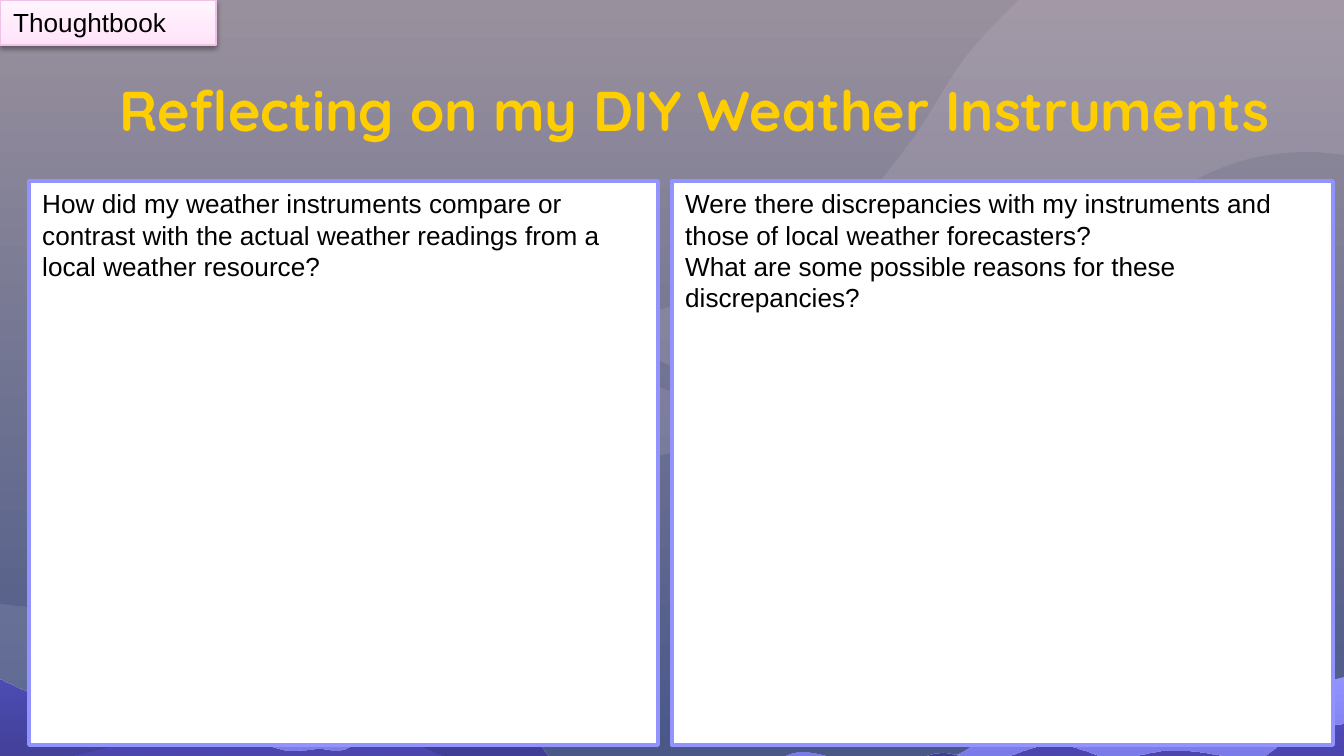
from dataclasses import dataclass
from lxml.etree import Element, SubElement
from math import dist
from pptx import Presentation
from pptx.dml.color import RGBColor as RGB
from pptx.enum.shapes import MSO_SHAPE as Shape
from pptx.enum.text import MSO_ANCHOR as Anchor, PP_ALIGN as Align
from pptx.oxml.ns import qn
from pptx.util import Pt


@dataclass(frozen=True)
class Theme:
    sky: tuple = ((0, "99909D", 100), (100, "495887", 100))
    back: tuple = ((0, "9393FF", 100), (100, "4846BB", 100))
    front: tuple = ((0, "4846BB", 84), (100, "281B66", 63))
    tag: tuple = ((0, "FFE1F9", 100), (35, "FFE9FB", 100), (100, "FFF6FD", 100))
    cloud: str = "FDF0F7"
    gold: str = "FFCE00"
    ink: str = "000000"
    paper: str = "FFFFFF"
    edge: str = "9393FF"
    rim: str = "F1C2E8"
    head: int = 30
    body: int = 14
    display: str = "Quicksand"
    plain: str = "Arial"


T = Theme()
WIDE, HIGH = 1344, 756
PX = 9144000 / WIDE
TURN = 759  # height about which the clouds swap ends

TITLE = "Reflecting on my DIY Weather Instruments"
TAG = "Thoughtbook"
PANELS = [
    (29, 629, ["How did my weather instruments compare or contrast with the "
               "actual weather readings from a local weather resource?"]),
    (672, 661, ["Were there discrepancies with my instruments and those of "
                "local weather forecasters?",
                "What are some possible reasons for these discrepancies?"]),
]

# Each outline is a list of smooth runs; corners fall where runs meet.
CLOUD = [
    [(1344, 0)],
    [(1344, 155), (1310, 152), (1258, 157), (1134, 216), (1023, 306),
     (886, 379), (790, 392), (735, 387), (594, 324)],
    [(616, 319), (660, 333), (731, 288)],
    [(731, 288), (840, 224), (909, 144), (973, 48), (1019, 0)],
]
LENS = [
    [(731, 288), (660, 333), (616, 319)],
    [(616, 319), (674, 306), (731, 288)],
]
BACK = [
    [(1345, 677), (1243, 702), (1163, 726), (1128, 730), (1103, 727),
     (1052, 731), (1015, 728), (993, 734), (957, 755), (919, 763),
     (884, 758), (857, 761), (792, 754), (765, 767), (700, 785),
     (629, 809), (579, 800), (476, 770), (345, 707), (309, 685),
     (289, 694), (265, 704), (235, 708), (204, 720), (172, 727),
     (105, 749), (44, 761), (0, 762)],
    [(0, 911)], [(1345, 911)],
]
FRONT = [
    [(0, 878)], [(1345, 878)],
    [(1345, 724), (1312, 728), (1257, 763)],
    [(1255, 765), (1180, 751), (1140, 755), (1116, 765)],
    [(1114, 764), (1060, 746), (1036, 747), (1007, 757), (988, 763),
     (961, 757), (941, 753), (909, 763), (883, 777), (855, 775),
     (823, 769), (796, 763), (777, 767), (680, 780), (633, 784),
     (555, 763), (516, 716), (482, 695), (456, 692), (445, 696),
     (376, 728), (359, 741), (343, 750), (316, 749), (286, 751),
     (261, 743), (234, 726), (220, 723), (188, 730), (142, 714),
     (121, 711), (85, 710), (0, 680)],
]


def emu(*nums):
    return [round(n * PX) for n in nums]


def handles(run):
    """Two control points for each gap in the run, by chord-length tangents."""
    gaps = [dist(a, b) for a, b in zip(run, run[1:])]
    dirs = [[(q - p) / g for p, q in zip(a, b)]
            for a, b, g in zip(run, run[1:], gaps)]
    tans = [[(u * h + v * g) / (g + h) for u, v in zip(a, b)]
            for a, b, g, h in zip(dirs, dirs[1:], gaps, gaps[1:])]
    ends = [[(3 * u - v) / 2 for u, v in zip(d, t)]
            for d, t in ((dirs[0], tans[0]), (dirs[-1], tans[-1]))]
    tans = [ends[0], *tans, ends[1]]
    return [([p + u * g / 3 for p, u in zip(a, s)],
             [q - v * g / 3 for q, v in zip(b, t)])
            for a, b, g, s, t in zip(run, run[1:], gaps, tans, tans[1:])]


def outline(slide, runs):
    pts, bends = [], []
    for run in runs:
        if not pts or run[0] != pts[-1]:
            pts.append(run[0])
            bends.append(None)
        if len(run) > 1:
            pts += run[1:]
            bends += handles(run)
    pen = slide.shapes.build_freeform(*emu(*pts[0]))
    pen.add_line_segments([emu(*pt) for pt in pts[1:]])
    shape = pen.convert_to_shape()
    for node, bend in zip(list(shape.element.iter(qn("a:lnTo"))), bends[1:]):
        if bend:
            node.tag = qn("a:cubicBezTo")
            for i, pt in enumerate(bend):
                x, y = emu(*pt)
                node.insert(i, Element(qn("a:pt"), x=str(x - shape.left),
                                       y=str(y - shape.top)))
    shape.shadow.inherit = False
    shape.line.fill.background()
    return shape


def shade(fill, root, stops, angle):
    """Gradient of (place, colour, opacity) stops; angle is clockwise."""
    fill.gradient()
    fill.gradient_angle = 360 - angle
    box = next(root.iter(qn("a:gsLst")))
    for old in list(box):
        box.remove(old)
    for place, color, alpha in stops:
        stop = SubElement(box, qn("a:gs"), pos=str(place * 1000))
        tint = SubElement(stop, qn("a:srgbClr"), val=color)
        if alpha < 100:
            SubElement(tint, qn("a:alpha"), val=str(alpha * 1000))


def solid(shape, color, alpha=100):
    shape.fill.solid()
    shape.fill.fore_color.rgb = RGB.from_string(color)
    if alpha < 100:
        tint = next(shape.element.spPr.iter(qn("a:srgbClr")))
        SubElement(tint, qn("a:alpha"), val=str(alpha * 1000))


def card(slide, box, edge, width):
    shape = slide.shapes.add_shape(Shape.RECTANGLE, *emu(*box))
    shape.shadow.inherit = False
    shape.line.color.rgb = RGB.from_string(edge)
    shape.line.width = Pt(width)
    return shape


def write(shape, lines, size=T.body, font=T.plain, color=T.ink, bold=False):
    frame = shape.text_frame
    frame.word_wrap = True
    frame.vertical_anchor = Anchor.TOP
    for i, line in enumerate(lines):
        para = frame.add_paragraph() if i else frame.paragraphs[0]
        para.alignment = Align.LEFT
        run = para.add_run()
        run.text = line
        run.font.size, run.font.name, run.font.bold = Pt(size), font, bold
        run.font.color.rgb = RGB.from_string(color)


def scene(slide):
    shade(slide.background.fill, slide.element, T.sky, 90)
    for flip in (False, True):
        for runs in (CLOUD, LENS):
            if flip:
                runs = [[(WIDE - x, TURN - y) for x, y in run] for run in runs]
            solid(outline(slide, runs), T.cloud, 10)
    for runs, stops in ((BACK, T.back), (FRONT, T.front)):
        wave = outline(slide, runs)
        shade(wave.fill, wave.element, stops, 90)


def main():
    deck = Presentation()
    deck.slide_width, deck.slide_height = emu(WIDE, HIGH)
    slide = deck.slides.add_slide(deck.slide_layouts[6])
    scene(slide)

    title = slide.shapes.add_textbox(*emu(106, 63, 1208, 85))
    title.text_frame.margin_top = title.text_frame.margin_bottom = emu(13)[0]
    write(title, [TITLE], size=T.head, font=T.display, color=T.gold, bold=True)

    tag = card(slide, (0, 0, 216, 45), T.rim, 0.75)
    shade(tag.fill, tag.element, T.tag, 270)
    glow = SubElement(next(tag.element.iter(qn("a:effectLst"))),
                      qn("a:outerShdw"), blurRad="40000", dist="20000",
                      dir="5400000", rotWithShape="0")
    tint = SubElement(glow, qn("a:srgbClr"), val=T.ink)
    SubElement(tint, qn("a:alpha"), val="38000")
    write(tag, [TAG])

    for left, width, lines in PANELS:
        panel = card(slide, (left, 181, width, 564), T.edge, 2)
        solid(panel, T.paper)
        write(panel, lines)

    deck.save("out.pptx")


if __name__ == "__main__":
    main()
